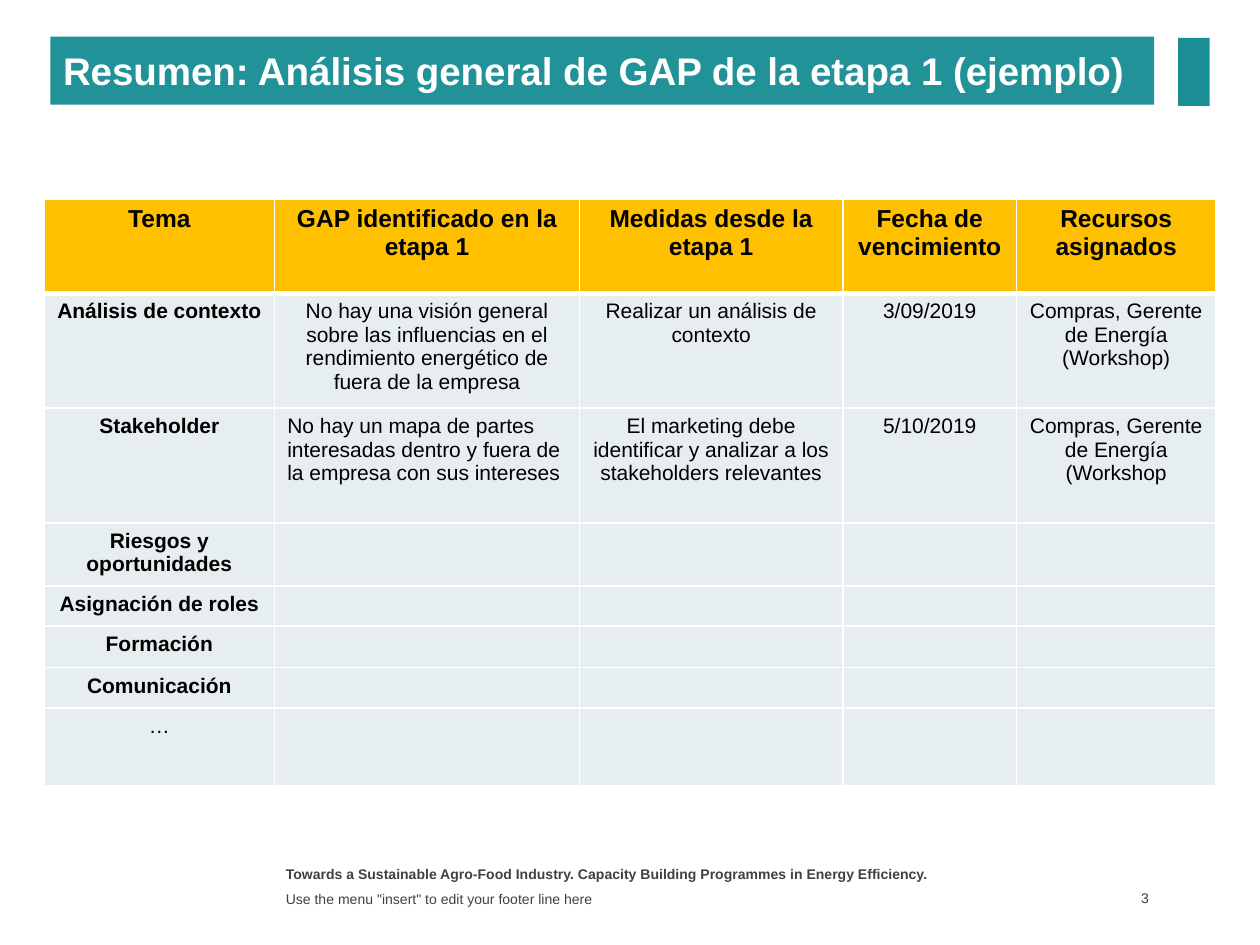
import lxml.etree
import pptx
import pptx.dml.color
import pptx.enum.shapes
import pptx.enum.text
import pptx.oxml.ns
import pptx.util

Inches = pptx.util.Inches
ALIGN = pptx.enum.text.PP_ALIGN
ANCHOR = pptx.enum.text.MSO_ANCHOR
COLUMNS = [1.83, 2.42, 2.09, 1.38, 1.58]
ROWS = [0.75, 0.91, 0.91, 0.48, 0.32, 0.33, 0.32, 0.62]
CONTENT = [
    ["Tema", "GAP identificado en la etapa 1", "Medidas desde la etapa 1",
     "Fecha de vencimiento", "Recursos asignados"],
    ["Análisis de contexto",
     "No hay una visión general sobre las influencias en el rendimiento energético de fuera de la empresa",
     "Realizar un análisis de contexto", "3/09/2019", "Compras, Gerente de Energía (Workshop)"],
    ["Stakeholder",
     "No hay un mapa de partes interesadas dentro y fuera de la empresa con sus intereses",
     "El marketing debe identificar y analizar a los stakeholders relevantes",
     "5/10/2019", "Compras, Gerente de Energía (Workshop"],
    ["Riesgos y oportunidades"],
    ["Asignación de roles"],
    ["Formación"],
    ["Comunicación"],
    ["…"],
]


def color(value):
    """Return the RGB colour for a hex string."""
    return pptx.dml.color.RGBColor.from_string(value)


def add_element(parent, tag, **attributes):
    """Append a DrawingML element to a parent."""
    return lxml.etree.SubElement(parent, pptx.oxml.ns.qn(tag), **attributes)


def fill_with(target, value):
    """Give a shape or cell a solid fill."""
    target.fill.solid()
    target.fill.fore_color.rgb = color(value)


def write_text(frame, text, size, value, bold=False, align=ALIGN.LEFT):
    """Write one paragraph into a text frame and format its runs."""
    frame.text = text
    paragraph = frame.paragraphs[0]
    paragraph.alignment = align
    for run in paragraph.runs:
        run.font.name = "Arial"
        run.font.size = pptx.util.Pt(size)
        run.font.bold = bold
        run.font.color.rgb = color(value)


def add_title(slide, box):
    """Place the title bar and the accent block at its right."""
    left, top, width, height = box
    title = slide.shapes.title
    title.left, title.top, title.width, title.height = map(Inches, box)
    fill_with(title, "209298")
    title.text_frame.vertical_anchor = ANCHOR.MIDDLE
    title.text_frame.auto_size = pptx.enum.text.MSO_AUTO_SIZE.NONE
    write_text(title.text_frame, "Resumen: Análisis general de GAP de la etapa 1 (ejemplo)",
               22, "FFFFFF", True)
    accent = slide.shapes.add_shape(
        pptx.enum.shapes.MSO_SHAPE.RECTANGLE,
        Inches(left + width + 0.19), Inches(top + 0.01), Inches(0.25), Inches(height))
    accent.shadow.inherit = False
    fill_with(accent, "1B8E95")
    accent.line.fill.background()


def add_borders(cell, row):
    """Draw white cell borders, thicker below the header row."""
    properties = cell._tc.get_or_add_tcPr()
    thick = {0: "a:lnB", 1: "a:lnT"}.get(row)
    for side in ("a:lnL", "a:lnR", "a:lnT", "a:lnB"):
        width = pptx.util.Pt(3 if side == thick else 1)
        line = add_element(properties, side, w=str(int(width)))
        add_element(add_element(line, "a:solidFill"), "a:srgbClr", val="FFFFFF")


def format_cell(cell, row, column, text):
    """Write and style one table cell."""
    header = row == 0
    add_borders(cell, row)
    fill_with(cell, "FFC000" if header else "E7EEEF")
    if not text:
        add_element(cell.text_frame.paragraphs[0]._p, "a:endParaRPr", sz="1200")
        return
    bold = header or (column == 0 and text != "…")
    align = ALIGN.LEFT if (row, column) == (2, 1) else ALIGN.CENTER
    write_text(cell.text_frame, text, 14 if header else 12, "000000", bold, align)


def add_gap_table(slide, left, top):
    """Build the gap analysis table from its column and row sizes."""
    table = slide.shapes.add_table(
        len(ROWS), len(COLUMNS), Inches(left), Inches(top),
        Inches(sum(COLUMNS)), Inches(sum(ROWS))).table
    for column, width in zip(table.columns, COLUMNS):
        column.width = Inches(width)
    for row, height in enumerate(ROWS):
        table.rows[row].height = Inches(height)
        for column in range(len(COLUMNS)):
            text = CONTENT[row][column] if column < len(CONTENT[row]) else ""
            format_cell(table.cell(row, column), row, column, text)


def add_footer_text(slide, box, text, bold=False, align=ALIGN.LEFT, anchor=ANCHOR.MIDDLE):
    """Add one small grey line of footer text."""
    frame = slide.shapes.add_textbox(*map(Inches, box)).text_frame
    frame.word_wrap = True
    frame.vertical_anchor = anchor
    write_text(frame, text, 8, "404040", bold, align)
    return frame


def add_footer(slide, left, top):
    """Place the programme line, the footer line and the slide number."""
    add_footer_text(
        slide, (left, top, 5.5, 0.21),
        "Towards a Sustainable Agro-Food Industry. Capacity Building Programmes in Energy Efficiency.",
        bold=True, anchor=ANCHOR.TOP)
    add_footer_text(slide, (left, top + 0.22, 5.5, 0.19),
                    'Use the menu "insert" to edit your footer line here')
    number = add_footer_text(slide, (left + 6.43, top + 0.21, 0.56, 0.2), "3", align=ALIGN.RIGHT)
    number.margin_right = Inches(0.04)


def main():
    """Build and save the presentation."""
    presentation = pptx.Presentation()
    presentation.slide_width = Inches(10)
    presentation.slide_height = Inches(7.5)
    slide = presentation.slides.add_slide(presentation.slide_layouts[5])
    add_footer(slide, 2.17, 6.82)
    add_gap_table(slide, 0.35, 1.58)
    add_title(slide, (0.4, 0.29, 8.76, 0.54))
    presentation.save("out.pptx")


if __name__ == "__main__":
    main()
